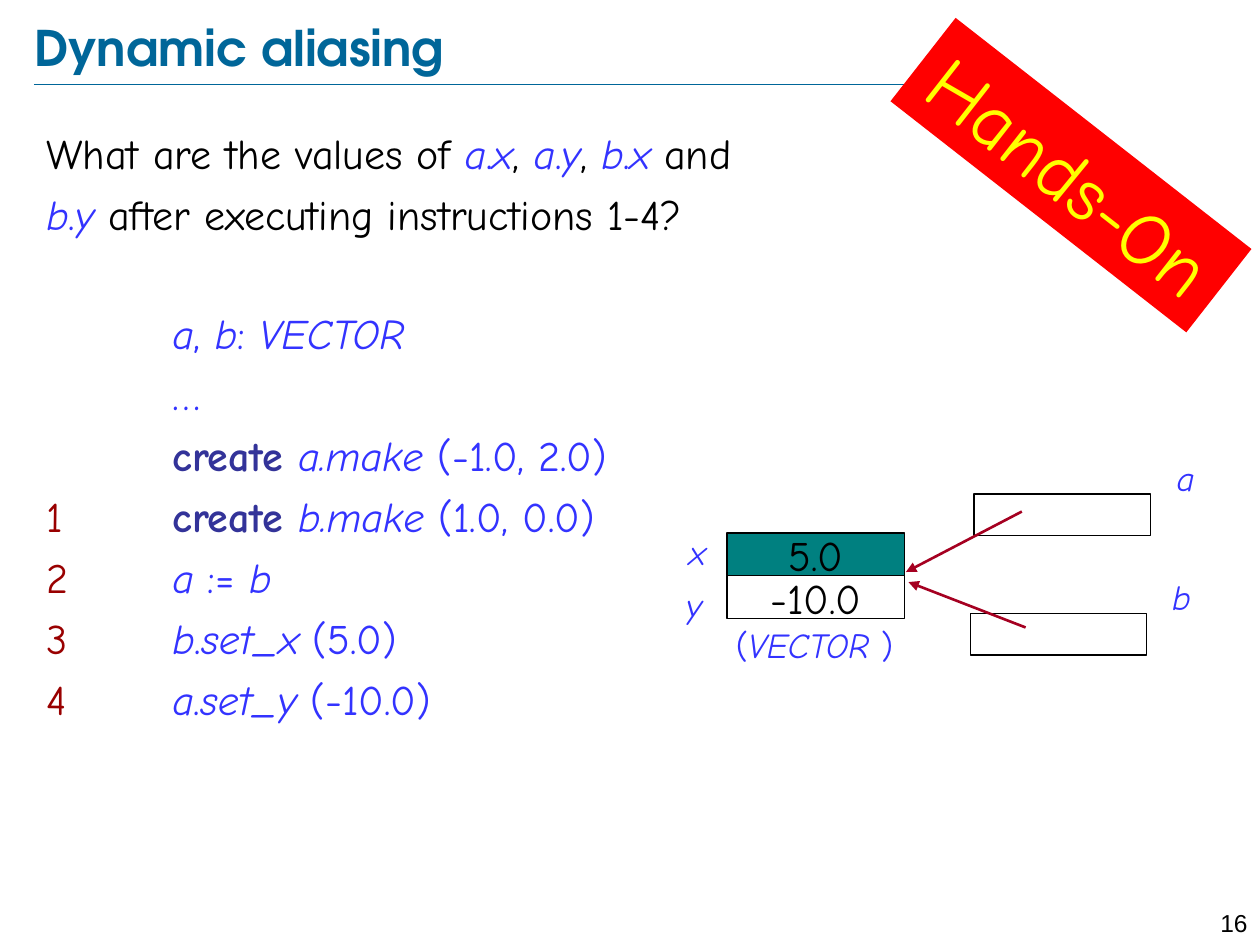
from dataclasses import dataclass

from lxml.etree import SubElement
from pptx import Presentation
from pptx.dml.color import RGBColor
from pptx.enum.shapes import MSO_CONNECTOR, MSO_SHAPE
from pptx.enum.text import MSO_ANCHOR, PP_ALIGN
from pptx.oxml.ns import qn
from pptx.util import Inches, Pt

SLIDE_WIDTH = Inches(10)
SLIDE_HEIGHT = Inches(7.5)
COLUMN = SLIDE_WIDTH / 100
ROW = SLIDE_HEIGHT / 75
BODY_FONT = "Comic Neue"

STYLES = {
    "plain": ("000000", False, False),
    "code": ("3333FF", False, False),
    "name": ("3333FF", False, True),
    "keyword": ("333399", True, False),
    "number": ("990000", False, False),
    "title": ("006699", True, False),
    "banner": ("FFFF00", False, False),
}

QUESTION = [
    [("What are the values of ", "plain"),
     ("a", "name"), (".", "code"), ("x", "name"), (", ", "plain"),
     ("a", "name"), (".", "code"), ("y", "name"), (", ", "plain"),
     ("b", "name"), (".", "code"), ("x", "name"), (" and", "plain")],
    [("b", "name"), (".", "code"), ("y", "name"),
     (" after executing instructions 1-4?", "plain")],
]
PROGRAM = [
    [("\t", "code"), ("a", "name"), (", ", "code"), ("b", "name"),
     (": ", "code"), ("VECTOR", "name")],
    [("\t…", "code")],
    [("\t", "code"), ("create ", "keyword"), ("a.make", "name"), (" (-1.0, 2.0)", "code")],
    [("1\t", "number"), ("create ", "keyword"), ("b.make", "name"), (" (1.0, 0.0)", "code")],
    [("2\t", "number"), ("a", "name"), (" := ", "code"), ("b", "name")],
    [("3\t", "number"), ("b", "name"), (".", "code"), ("set_x", "name"), (" (5.0)", "code")],
    [("4\t", "number"), ("a", "name"), (".", "code"), ("set_y", "name"), (" (-10.0)", "code")],
]


@dataclass
class Box:
    left: float
    top: float
    width: float
    height: float

    def inner(self, left, top, width, height):
        return Box(self.left + left, self.top + top, width, height)

    def lengths(self):
        return (round(self.left * COLUMN), round(self.top * ROW),
                round(self.width * COLUMN), round(self.height * ROW))


def color(value):
    return RGBColor.from_string(value)


def write_runs(paragraph, runs, size, font=BODY_FONT):
    for text, style in runs:
        run = paragraph.add_run()
        run.text = text
        run.font.name = font
        run.font.size = Pt(size)
        value, run.font.bold, run.font.italic = STYLES[style]
        run.font.color.rgb = color(value)


def add_text(slide, box, runs, size, align=PP_ALIGN.LEFT, font=BODY_FONT):
    frame = slide.shapes.add_textbox(*box.lengths()).text_frame
    frame.word_wrap = True
    frame.paragraphs[0].alignment = align
    write_runs(frame.paragraphs[0], runs, size, font)
    return frame


def add_rectangle(slide, box, fill, line=None, runs=(), size=24):
    shape = slide.shapes.add_shape(MSO_SHAPE.RECTANGLE, *box.lengths())
    shape.shadow.inherit = False
    shape.fill.solid()
    shape.fill.fore_color.rgb = color(fill)
    if line:
        shape.line.color.rgb = color(line)
        shape.line.width = Pt(0.75)
    else:
        shape.line.fill.background()
    frame = shape.text_frame
    frame.word_wrap = False
    frame.vertical_anchor = MSO_ANCHOR.MIDDLE
    frame.paragraphs[0].alignment = PP_ALIGN.CENTER
    write_runs(frame.paragraphs[0], runs, size)
    return shape


def add_line(slide, box, value, width, arrow=False):
    left, top, across, down = box.lengths()
    connector = slide.shapes.add_connector(
        MSO_CONNECTOR.STRAIGHT, left, top, left + across, top + down)
    connector.line.color.rgb = color(value)
    connector.line.width = Pt(width)
    properties = connector._element.spPr
    if arrow:
        SubElement(properties.find(qn("a:ln")), qn("a:headEnd"), type="triangle")
    SubElement(properties, qn("a:effectLst"))


def add_heading(slide, box):
    add_line(slide, box.inner(0, 5.4, 78.8, 0), "006699", 0.25)
    frame = add_text(slide, box, [("Dynamic aliasing", "title")], 28,
                     font="TeX Gyre Adventor")
    frame.margin_left = frame.margin_right = frame.margin_top = frame.margin_bottom = 0
    frame.vertical_anchor = MSO_ANCHOR.MIDDLE


def add_exercise(slide, box):
    frame = slide.shapes.add_textbox(*box.lengths()).text_frame
    frame.word_wrap = True
    for index, runs in enumerate(QUESTION + PROGRAM):
        paragraph = frame.add_paragraph() if index else frame.paragraphs[0]
        tabs = SubElement(paragraph._p.get_or_add_pPr(), qn("a:tabLst"))
        SubElement(tabs, qn("a:tab"), pos=str(round(10 * COLUMN)), algn="l")
        if index:
            paragraph.space_before = Pt(39.5 if index == len(QUESTION) else 6)
        write_runs(paragraph, runs, 24)


def add_banner(slide, box):
    shape = add_rectangle(slide, box, "FF0000", runs=[("Hands-On", "banner")], size=44)
    shape.rotation = 38


def add_vector_object(slide, box):
    fields = [("x", "5.0", "008080", 0.3), ("y", "-10.0", "FFFFFF", 0)]
    for index, (name, value, fill, shift) in enumerate(fields):
        add_rectangle(slide, box.inner(5.4, 0.7 + 3.4 * index, 14.1, 3.4),
                      fill, "000000", [(value, "plain")])
        add_text(slide, box.inner(shift, 4.2 * index, 4.4, 4.4),
                 [(name, "name")], 20, PP_ALIGN.RIGHT)
    add_text(slide, box.inner(3.3, 7.4, 18.1, 4.4),
             [("(", "code"), ("VECTOR ", "name"), (")", "code")], 20, PP_ALIGN.CENTER)


def add_reference(slide, box, name, arrow):
    add_rectangle(slide, box.inner(0, 3.5, 14, 3.3), "FFFFFF", "000000")
    add_text(slide, box.inner(14.1, 0, 4.4, 4.4), [(name, "name")], 20, PP_ALIGN.RIGHT)
    add_line(slide, box.inner(*arrow), "A50021", 1.5, arrow=True)


def add_page_number(slide, box):
    add_text(slide, box, [("16", "plain")], 14, PP_ALIGN.RIGHT, "Arial")


def main():
    presentation = Presentation()
    presentation.slide_width = SLIDE_WIDTH
    presentation.slide_height = SLIDE_HEIGHT
    slide = presentation.slides.add_slide(presentation.slide_layouts[6])
    add_heading(slide, Box(2.7, 1.3, 86.9, 4.8))
    add_page_number(slide, Box(94.5, 71.6, 5.5, 2.4))
    add_exercise(slide, Box(2.7, 9.6, 94, 61.7))
    add_banner(slide, Box(70.1, 9.7, 29.8, 8.4))
    add_vector_object(slide, Box(52.3, 41.6, 21.4, 11.8))
    add_reference(slide, Box(77.3, 35.7, 18.5, 6.8), "a", (-5.4, 9.7, 9.2, -4.8))
    add_reference(slide, Box(77, 45.2, 18.5, 6.8), "b", (-4.9, 1, 9.3, 3.6))
    presentation.save("out.pptx")


if __name__ == "__main__":
    main()
